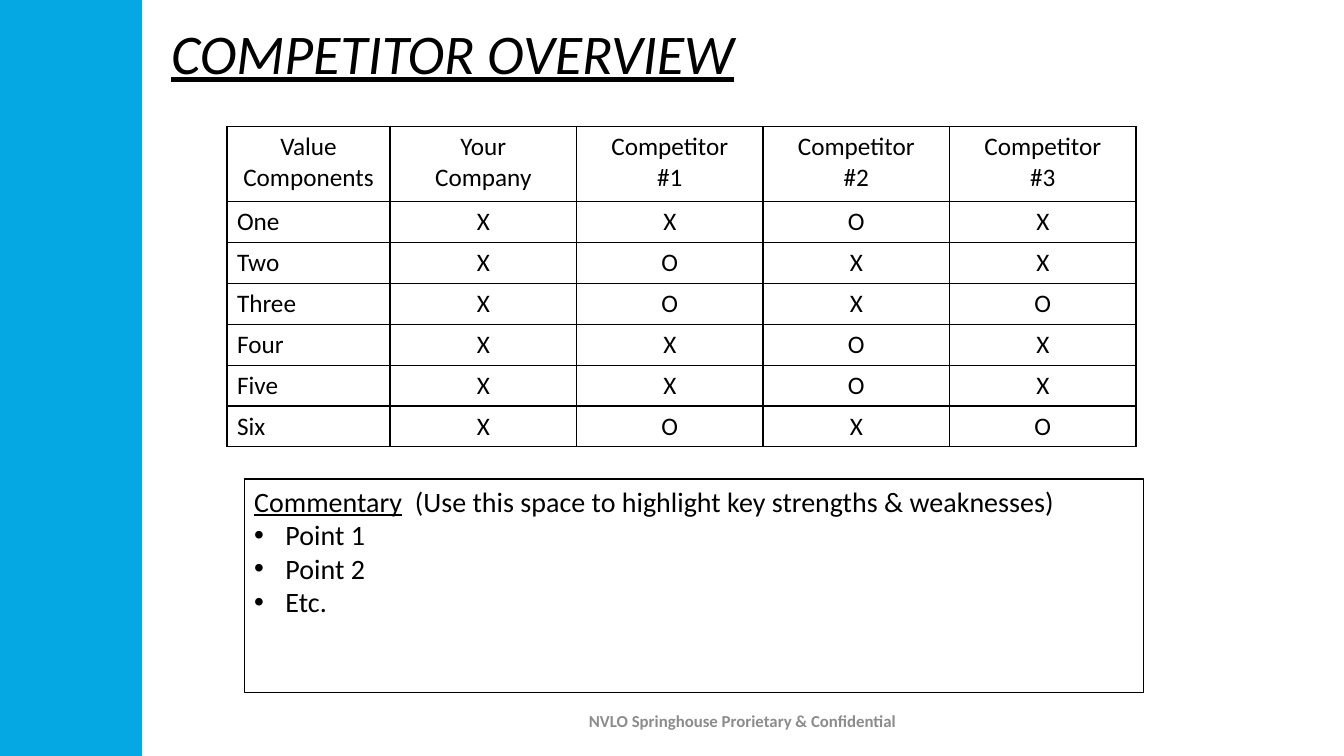
"""Build the competitor overview slide with its comparison table and commentary."""
import dataclasses
import typing

import lxml.etree
import pptx
import pptx.dml.color
import pptx.enum.shapes
import pptx.enum.text
import pptx.oxml.ns
import pptx.util

Cm = pptx.util.Cm
Pt = pptx.util.Pt
Align = pptx.enum.text.PP_ALIGN
Anchor = pptx.enum.text.MSO_ANCHOR
AutoSize = pptx.enum.text.MSO_AUTO_SIZE


@dataclasses.dataclass(frozen=True)
class Theme:
    font: str = "Calibri"
    accent: str = "05A8E3"
    ink: str = "000000"
    muted: str = "8C8C8C"
    title: int = 40
    body: int = 20
    table: int = 18
    footer: int = 12


class Box(typing.NamedTuple):
    left: float
    top: float
    width: float
    height: float

    def lengths(self) -> list[pptx.util.Length]:
        return [Cm(value) for value in self]


class Competition(typing.NamedTuple):
    component: str
    marks: str


THEME = Theme()
BAR = Box(0, 0, 3.58, 19.05)
TITLE = Box(4.06, 0.33, 14.86, 1.96)
COMMENTARY = Box(6.15, 12.07, 22.66, 5.38)
FOOTER = Box(13, 17.65, 11.43, 1.02)
TABLE_LEFT, TABLE_TOP = 5.72, 3.18
COLUMN_WIDTHS = [4.11] + [4.7] * 4
HEADER_HEIGHT, ROW_HEIGHT = 1.9, 1.02
HEADINGS = ["Value\nComponents", "Your\nCompany"] + [
    f"Competitor\n#{number}" for number in range(1, 4)
]
ROWS = [
    Competition("One", "XXOX"),
    Competition("Two", "XOXX"),
    Competition("Three", "XOXO"),
    Competition("Four", "XXOX"),
    Competition("Five", "XXOX"),
    Competition("Six", "XOXO"),
]
POINTS = ["Point 1", "Point 2", "Etc."]


def apply(target: typing.Any, values: dict[str, typing.Any]) -> None:
    for name, value in values.items():
        setattr(target, name, value)


def rgb(color: str) -> pptx.dml.color.RGBColor:
    return pptx.dml.color.RGBColor.from_string(color)


def format_font(font: typing.Any, size: int, color: str = THEME.ink, **values: bool) -> None:
    apply(font, {"name": THEME.font, "size": Pt(size), **values})
    font.color.rgb = rgb(color)


def place(shape: typing.Any, box: Box) -> None:
    apply(shape, dict(zip(box._fields, box.lengths())))


def add_element(parent: typing.Any, tag: str, **attributes: str) -> typing.Any:
    return lxml.etree.SubElement(parent, pptx.oxml.ns.qn(tag), attributes)


def set_bullet(paragraph: typing.Any, bullet: str, indent: float) -> None:
    properties = paragraph._p.get_or_add_pPr()
    properties.set("marL", str(Cm(indent)))
    properties.set("indent", str(-Cm(indent)))
    if bullet:
        add_element(properties, "a:buFont", typeface="Arial")
        add_element(properties, "a:buChar", char=bullet)
    else:
        add_element(properties, "a:buNone")


def add_bar(slide: typing.Any) -> None:
    bar = slide.shapes.add_shape(pptx.enum.shapes.MSO_SHAPE.RECTANGLE, *BAR.lengths())
    bar.shadow.inherit = False
    bar.fill.solid()
    bar.fill.fore_color.rgb = rgb(THEME.accent)
    bar.line.fill.background()


def fill_title(title: typing.Any) -> None:
    place(title, TITLE)
    frame = title.text_frame
    frame.text = "COMPETITOR OVERVIEW"
    apply(frame, {"word_wrap": False, "auto_size": AutoSize.SHAPE_TO_FIT_TEXT,
                  "vertical_anchor": Anchor.TOP})
    paragraph = frame.paragraphs[0]
    paragraph.alignment = Align.LEFT
    format_font(paragraph.runs[0].font, THEME.title, italic=True, underline=True)


def fill_cell(cell: typing.Any, text: str, alignment: typing.Any) -> None:
    cell.text = text
    for paragraph in cell.text_frame.paragraphs:
        paragraph.alignment = alignment
        format_font(paragraph.runs[0].font, THEME.table, bold=False)
    properties = cell._tc.get_or_add_tcPr()
    for side in "LRTB":
        border = add_element(properties, f"a:ln{side}", w=str(Pt(1)))
        add_element(add_element(border, "a:solidFill"), "a:srgbClr", val=THEME.ink)
    cell.fill.background()


def add_table(slide: typing.Any) -> None:
    heights = [HEADER_HEIGHT] + [ROW_HEIGHT] * len(ROWS)
    box = Box(TABLE_LEFT, TABLE_TOP, sum(COLUMN_WIDTHS), sum(heights))
    table = slide.shapes.add_table(len(heights), len(COLUMN_WIDTHS), *box.lengths()).table
    apply(table, {"first_row": False, "horz_banding": False})
    for column, width in zip(table.columns, COLUMN_WIDTHS):
        column.width = Cm(width)
    for row, height in zip(table.rows, heights):
        row.height = Cm(height)
    contents = [HEADINGS] + [[row.component, *row.marks] for row in ROWS]
    for row_index, texts in enumerate(contents):
        for column_index, text in enumerate(texts):
            is_label = row_index > 0 and column_index == 0
            alignment = Align.LEFT if is_label else Align.CENTER
            fill_cell(table.cell(row_index, column_index), text, alignment)


def fill_commentary(body: typing.Any) -> None:
    place(body, COMMENTARY)
    body.line.color.rgb = rgb(THEME.ink)
    body.line.width = Pt(0.75)
    frame = body.text_frame
    apply(frame, {"word_wrap": True, "auto_size": AutoSize.NONE, "vertical_anchor": Anchor.TOP})
    heading = frame.paragraphs[0]
    set_bullet(heading, "", 0)
    heading.add_run().text = "Commentary"
    heading.add_run().text = "  (Use this space to highlight key strengths & weaknesses)"
    for point in POINTS:
        paragraph = frame.add_paragraph()
        set_bullet(paragraph, "•", 0.79)
        paragraph.add_run().text = point
    for paragraph in frame.paragraphs:
        paragraph.space_before = Pt(0)
        for run in paragraph.runs:
            format_font(run.font, THEME.body)
    heading.runs[0].font.underline = True


def add_footer(slide: typing.Any) -> None:
    frame = slide.shapes.add_textbox(*FOOTER.lengths()).text_frame
    frame.text = "NVLO Springhouse Prorietary & Confidential"
    apply(frame, {"word_wrap": True, "vertical_anchor": Anchor.MIDDLE})
    paragraph = frame.paragraphs[0]
    paragraph.alignment = Align.CENTER
    format_font(paragraph.runs[0].font, THEME.footer, THEME.muted, bold=True)


def main() -> None:
    presentation = pptx.Presentation()
    apply(presentation, {"slide_width": Cm(33.87), "slide_height": Cm(19.05)})
    slide = presentation.slides.add_slide(presentation.slide_layouts[1])
    add_bar(slide)
    fill_title(slide.shapes.title)
    add_table(slide)
    fill_commentary(slide.placeholders[1])
    add_footer(slide)
    presentation.save("out.pptx")


if __name__ == "__main__":
    main()
